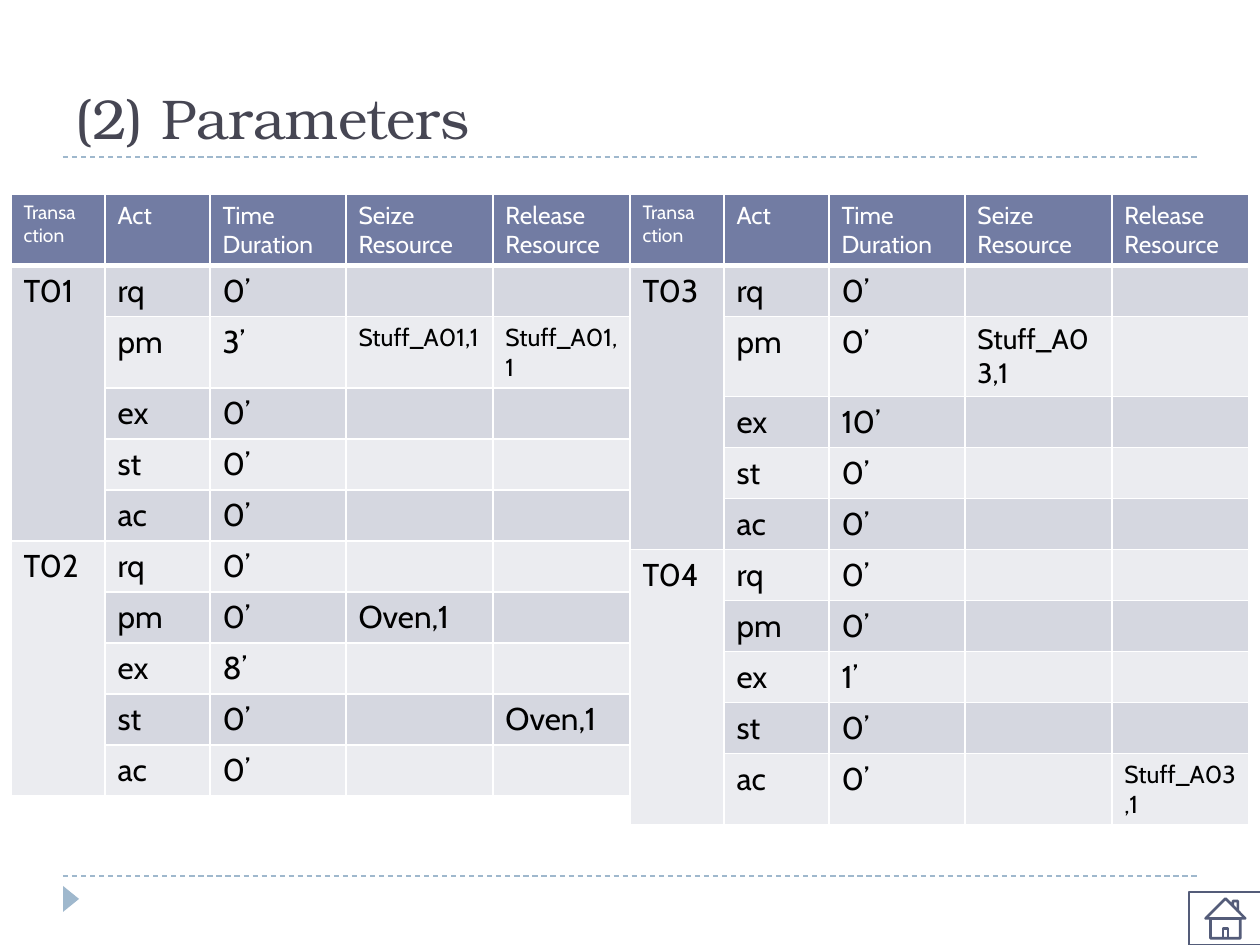
import pptx
import pptx.util
import pptx.dml.color
import pptx.enum.dml
import pptx.enum.shapes
import pptx.enum.text
import pptx.oxml.ns
from lxml import etree

RGBColor = pptx.dml.color.RGBColor
MSO_SHAPE = pptx.enum.shapes.MSO_SHAPE
WHITE = RGBColor(0xFF, 0xFF, 0xFF)
BLACK = RGBColor(0x00, 0x00, 0x00)
TITLE_GRAY = RGBColor(0x46, 0x46, 0x53)
PALE_BLUE = RGBColor(0x9F, 0xB8, 0xCD)
HEADER_BLUE = RGBColor(0x72, 0x7C, 0xA3)
BUTTON_BLUE = RGBColor(0x54, 0x5C, 0x79)
BANDS = [RGBColor(0xD5, 0xD7, 0xE0), RGBColor(0xEB, 0xEC, 0xF0)]

PX = 914400 // 126
COLUMN_WIDTHS = [94, 105, 136, 147, 137]
ROW_HEIGHT = 51
HEADERS = ["Transa\nction", "Act", "Time Duration", "Seize Resource", "Release\nResource"]
ACTS = ["rq", "pm", "ex", "st", "ac"]


def add_borders(cell, bottom_width):
    properties = cell._tc.get_or_add_tcPr()
    for side in "LRTB":
        width = bottom_width if side == "B" else 1
        line = etree.SubElement(properties, pptx.oxml.ns.qn(f"a:ln{side}"), w=str(pptx.util.Pt(width)))
        fill = etree.SubElement(line, pptx.oxml.ns.qn("a:solidFill"))
        etree.SubElement(fill, pptx.oxml.ns.qn("a:srgbClr"), val=str(WHITE))


def fill_cell(cell, text, size, color, background, bottom_width=1):
    add_borders(cell, bottom_width)
    cell.fill.solid()
    cell.fill.fore_color.rgb = background
    cell.text = text
    for paragraph in cell.text_frame.paragraphs:
        paragraph.font.name = "Cabin"
        paragraph.font.size = pptx.util.Pt(size)
        paragraph.font.color.rgb = color


presentation = pptx.Presentation()
presentation.slide_width = 1260 * PX
presentation.slide_height = 945 * PX
slide = presentation.slides.add_slide(presentation.slide_layouts[6])
shapes = slide.shapes

for y in [876, 157]:
    rule = shapes.add_connector(
        pptx.enum.shapes.MSO_CONNECTOR.STRAIGHT, 63 * PX, y * PX, 1197 * PX, y * PX)
    rule.line.color.rgb = PALE_BLUE
    rule.line.width = pptx.util.Pt(0.75)
    rule.line.dash_style = pptx.enum.dml.MSO_LINE.DASH
    etree.SubElement(rule._element.spPr, pptx.oxml.ns.qn("a:effectLst"))

marker = shapes.add_shape(MSO_SHAPE.ISOSCELES_TRIANGLE, 58 * PX, 891 * PX, 26 * PX, 16 * PX)
marker.rotation = 90
marker.shadow.inherit = False
marker.fill.solid()
marker.fill.fore_color.rgb = PALE_BLUE
marker.line.fill.background()

title = shapes.add_textbox(63 * PX, 21 * PX, 1134 * PX, 136 * PX)
title.text_frame.word_wrap = True
title.text_frame.vertical_anchor = pptx.enum.text.MSO_ANCHOR.BOTTOM
paragraph = title.text_frame.paragraphs[0]
paragraph.text = "(2) Parameters"
paragraph.font.name = "TeX Gyre Bonum"
paragraph.font.size = pptx.util.Pt(32)
paragraph.font.color.rgb = TITLE_GRAY

parameter_tables = [
    {"left": 11, "height": 602, "transactions": ["T01", "T02"],
     "durations": [0, 3, 0, 0, 0, 0, 0, 8, 0, 0],
     "resources": {(2, 3): ("Stuff_A01,1", 14), (2, 4): ("Stuff_A01,1", 14),
                   (7, 3): ("Oven,1", 18), (9, 4): ("Oven,1", 18)}},
    {"left": 630, "height": 631, "transactions": ["T03", "T04"],
     "durations": [0, 0, 10, 0, 0, 0, 0, 1, 0, 0],
     "resources": {(2, 3): ("Stuff_A03,1", 16), (10, 4): ("Stuff_A03,1", 14)}},
]

for content in parameter_tables:
    frame = shapes.add_table(
        11, 5, content["left"] * PX, 194 * PX, sum(COLUMN_WIDTHS) * PX, content["height"] * PX)
    table = frame.table
    for column, width in zip(table.columns, COLUMN_WIDTHS):
        column.width = width * PX
    for row in table.rows:
        row.height = ROW_HEIGHT * PX
    frame.height = content["height"] * PX

    for column, header in enumerate(HEADERS):
        size = 11 if column == 0 else 14
        fill_cell(table.cell(0, column), header, size, WHITE, HEADER_BLUE, 3)

    for index, duration in enumerate(content["durations"]):
        row = index + 1
        group, step = divmod(index, len(ACTS))
        transaction = content["transactions"][group] if step == 0 else ""
        fill_cell(table.cell(row, 0), transaction, 18, BLACK, BANDS[group])
        fill_cell(table.cell(row, 1), ACTS[step], 18, BLACK, BANDS[index % 2])
        fill_cell(table.cell(row, 2), f"{duration}’", 18, BLACK, BANDS[index % 2])
        for column in [3, 4]:
            text, size = content["resources"].get((row, column), ("", 18))
            fill_cell(table.cell(row, column), text, size, BLACK, BANDS[index % 2])

    for first in [1, 6]:
        table.cell(first, 0).merge(table.cell(first + 4, 0))

home = shapes.add_shape(MSO_SHAPE.ACTION_BUTTON_HOME, 1189 * PX, 892 * PX, 73 * PX, 53 * PX)
home.shadow.inherit = False
home.fill.background()
home.line.color.rgb = BUTTON_BLUE
home.line.width = pptx.util.Pt(1.5)

presentation.save("out.pptx")
